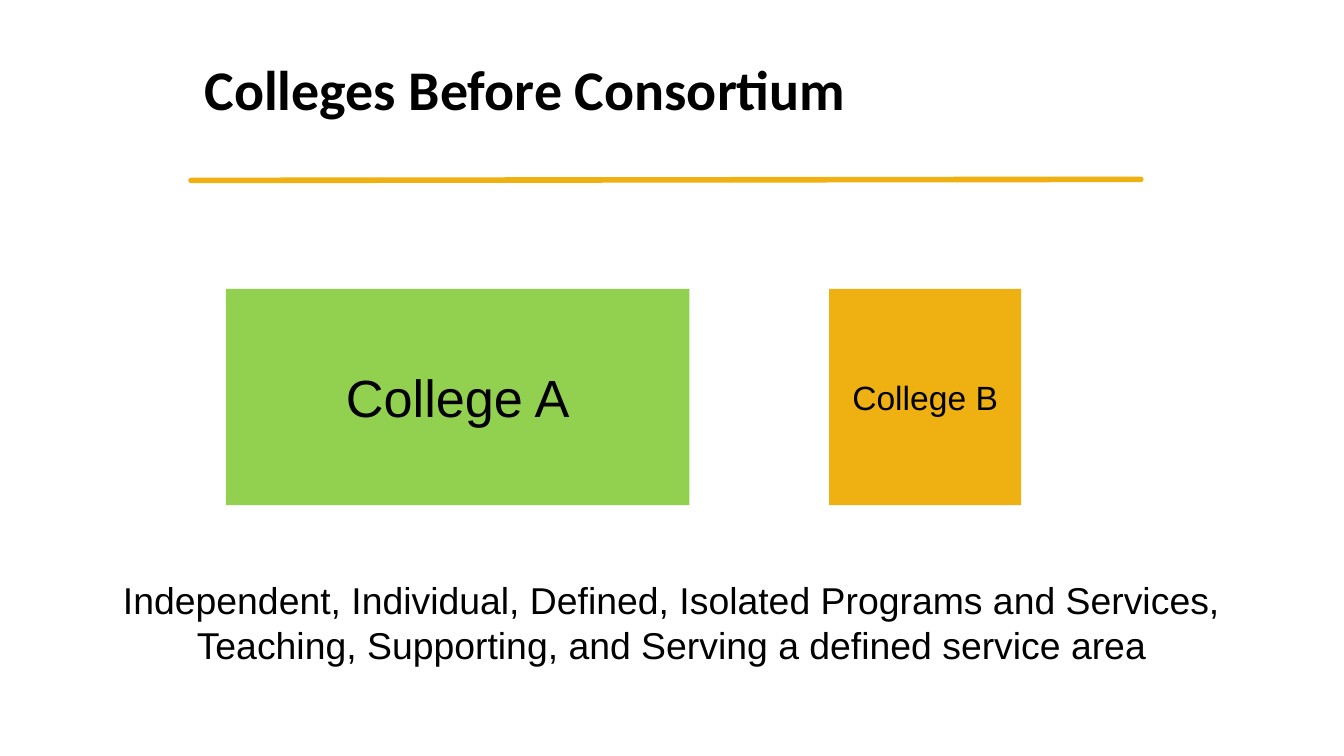
"""Build the slide that shows two separate colleges before the consortium."""
from lxml import etree
from pptx import Presentation
from pptx.dml.color import RGBColor as RGB
from pptx.enum.shapes import MSO_CONNECTOR as LINE, MSO_SHAPE as SHAPE
from pptx.enum.text import MSO_ANCHOR as ANCHOR, PP_ALIGN as ALIGN
from pptx.oxml.ns import qn
from pptx.util import Cm, Pt

HUES = {"gold": "EEB111", "green": "92D050", "black": "000000"}
INSET = Cm(0.05)
FRAME = {
    "word_wrap": True,
    "vertical_anchor": ANCHOR.MIDDLE,
    "margin_left": INSET,
    "margin_right": INSET,
    "margin_top": INSET,
    "margin_bottom": INSET,
}


def tint(name):
    return RGB.from_string(HUES[name])


def write(frame, lines, size):
    for key, value in FRAME.items():
        setattr(frame, key, value)
    frame.text = "\n".join(lines)
    for para in frame.paragraphs:
        para.alignment = ALIGN.CENTER
        para.font.name = "Arial"
        para.font.size = Pt(size)
        para.font.color.rgb = tint("black")


deck = Presentation()
deck.slide_width, deck.slide_height = Cm(25.4), Cm(14.29)
slide = deck.slides.add_slide(deck.slide_layouts[5])
shapes = slide.shapes

rule = shapes.add_connector(LINE.STRAIGHT, Cm(3.61), Cm(3.41), Cm(21.56), Cm(3.39))
rule.line.color.rgb = tint("gold")
rule.line.width = Pt(3)
rule.line._get_or_add_ln().set("cap", "rnd")
etree.SubElement(rule._element.spPr, qn("a:effectLst"))

title = shapes.title
place = {"left": 3.61, "top": 0.36, "width": 20.45, "height": 2.77}
for key, value in place.items():
    setattr(title, key, Cm(value))
title.text_frame.text = "Colleges Before Consortium"
title.text_frame.vertical_anchor = ANCHOR.MIDDLE
head = title.text_frame.paragraphs[0]
head.alignment = ALIGN.LEFT
head.line_spacing = 0.9
look = {"name": "Calibri", "size": Pt(30), "bold": True}
for key, value in look.items():
    setattr(head.font, key, value)
head.font.color.rgb = tint("black")

colleges = [
    ("College B", 15.67, 3.63, "gold", 18),
    ("College A", 4.27, 8.76, "green", 28),
]
for name, left, width, hue, size in colleges:
    box = shapes.add_shape(SHAPE.RECTANGLE, Cm(left), Cm(5.46), Cm(width), Cm(4.09))
    box.shadow.inherit = False
    box.fill.solid()
    box.fill.fore_color.rgb = tint(hue)
    box.line.fill.background()
    write(box.text_frame, [name], size)

note = shapes.add_textbox(0, Cm(10.87), deck.slide_width, Cm(1.78))
write(note.text_frame, [
    "Independent, Individual, Defined, Isolated Programs and Services,",
    "Teaching, Supporting, and Serving a defined service area",
], 20)

deck.save("out.pptx")
